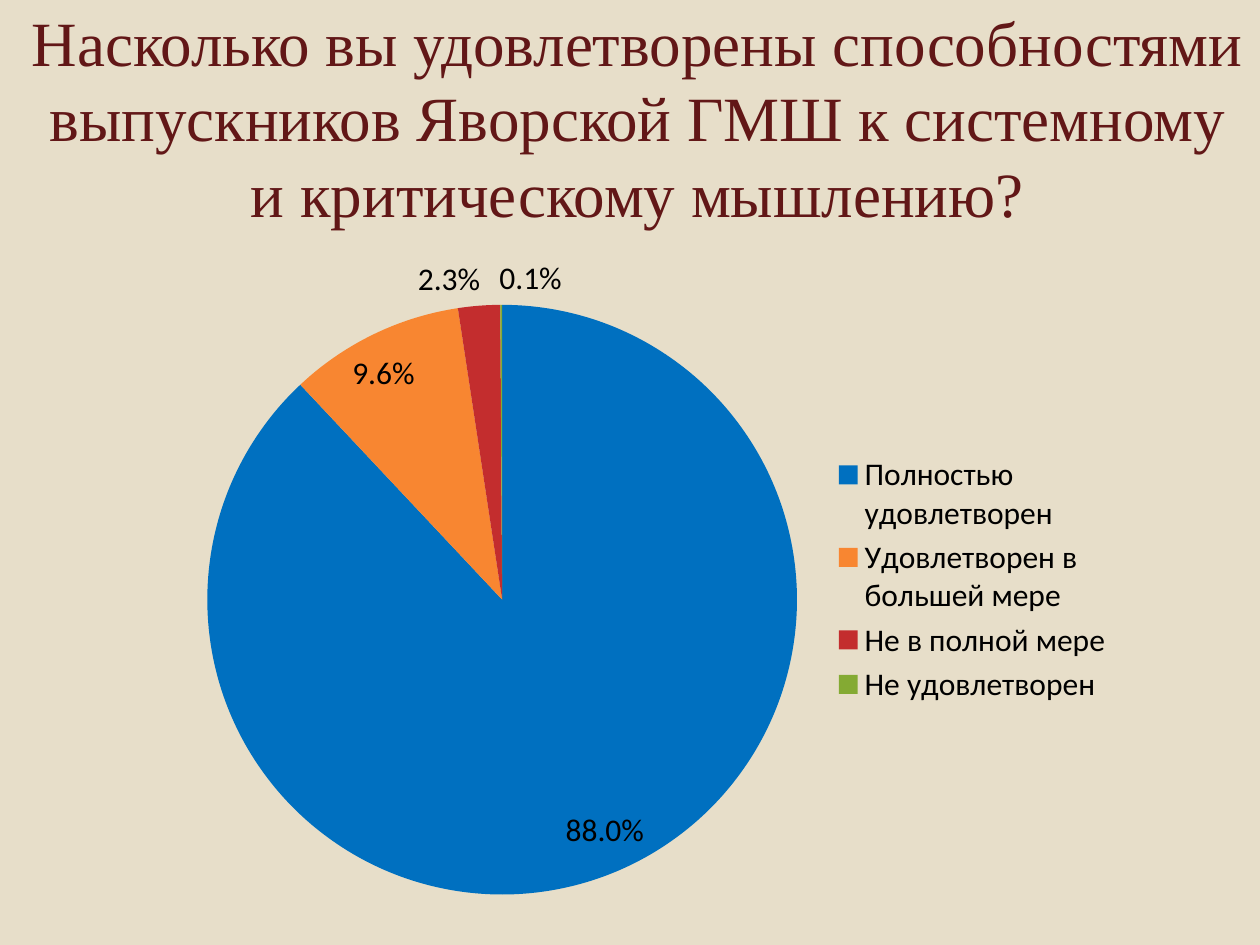
from dataclasses import dataclass

from lxml.etree import SubElement
from pptx import Presentation
from pptx.chart.data import CategoryChartData as PieData
from pptx.dml.color import RGBColor as Rgb
from pptx.enum.chart import XL_CHART_TYPE as Kind
from pptx.enum.chart import XL_LABEL_POSITION as Spot
from pptx.enum.chart import XL_LEGEND_POSITION as Side
from pptx.enum.text import MSO_ANCHOR as Anchor
from pptx.enum.text import PP_ALIGN as Align
from pptx.oxml.ns import qn
from pptx.util import Cm, Pt

COLORS = {
    "back": "E7DEC9",
    "title": "621717",
    "text": "000000",
    "blue": "0070C0",
    "orange": "F88631",
    "red": "C32D2E",
    "green": "84AA33",
}


@dataclass
class Slice:
    name: str
    value: float
    color: str


@dataclass
class Box:
    left: float
    top: float
    width: float
    height: float

    def sides(self) -> tuple:
        return tuple(Cm(n) for n in (self.left, self.top, self.width, self.height))


TITLE = (
    "Насколько вы удовлетворены способностями выпускников "
    "Яворской ГМШ к системному и критическому мышлению?"
)
SLICES = [
    Slice("Полностью удовлетворен", 88, "blue"),
    Slice("Удовлетворен в большей мере", 9.6, "orange"),
    Slice("Не в полной мере", 2.3, "red"),
    Slice("Не удовлетворен", 0.1, "green"),
]
LAYOUT = {
    "layoutTarget": "inner",
    "xMode": "edge",
    "yMode": "edge",
    "x": "0.03",
    "y": "0.09",
    "w": "0.63",
    "h": "0.88",
}


def apply(item, values: dict) -> None:
    for key, value in values.items():
        setattr(item, key, value)


def paint(fill, color: str) -> None:
    fill.solid()
    fill.fore_color.rgb = Rgb.from_string(COLORS[color])


def style(font, name: str, size: int, color: str) -> None:
    apply(font, {"name": name, "size": Pt(size)})
    font.color.rgb = Rgb.from_string(COLORS[color])


def add_title(slide, box: Box) -> None:
    frame = slide.shapes.add_textbox(*box.sides()).text_frame
    apply(frame, {"word_wrap": True, "vertical_anchor": Anchor.MIDDLE})
    line = frame.paragraphs[0]
    line.alignment = Align.CENTER
    run = line.add_run()
    run.text = TITLE
    style(run.font, "Times New Roman", 36, "title")


def place_plot(chart) -> None:
    area = chart.element.find(".//" + qn("c:plotArea"))
    for old in area.findall(qn("c:layout")):
        area.remove(old)
    layout = SubElement(area, qn("c:layout"))
    area.insert(0, layout)
    manual = SubElement(layout, qn("c:manualLayout"))
    for key, value in LAYOUT.items():
        SubElement(manual, qn("c:" + key)).set("val", value)


def add_pie(slide, box: Box, slices: list[Slice]) -> None:
    data = PieData()
    data.categories = [part.name for part in slices]
    data.add_series("Series 1", [part.value for part in slices])
    chart = slide.shapes.add_chart(Kind.PIE, *box.sides(), data).chart
    apply(chart, {"has_title": False, "has_legend": True})
    style(chart.font, "Calibri", 18, "text")
    apply(chart.legend, {"position": Side.RIGHT, "include_in_layout": False})
    plot = chart.plots[0]
    apply(plot, {"vary_by_categories": True, "has_data_labels": True})
    apply(plot.data_labels, {
        "show_percentage": True,
        "show_value": False,
        "number_format": "0.0%",
        "number_format_is_linked": False,
        "position": Spot.BEST_FIT,
    })
    style(plot.data_labels.font, "Calibri", 18, "text")
    for spot, part in enumerate(slices):
        paint(plot.series[0].points[spot].format.fill, part.color)
    place_plot(chart)


def main() -> None:
    deck = Presentation()
    apply(deck, {"slide_width": Cm(25.4), "slide_height": Cm(19.05)})
    slide = deck.slides.add_slide(deck.slide_layouts[6])
    paint(slide.background.fill, "back")
    add_title(slide, Box(0.3, 0.76, 25.1, 3.18))
    add_pie(slide, Box(3.5, 4.93, 19.2, 13.51), SLICES)
    deck.save("out.pptx")


if __name__ == "__main__":
    main()
